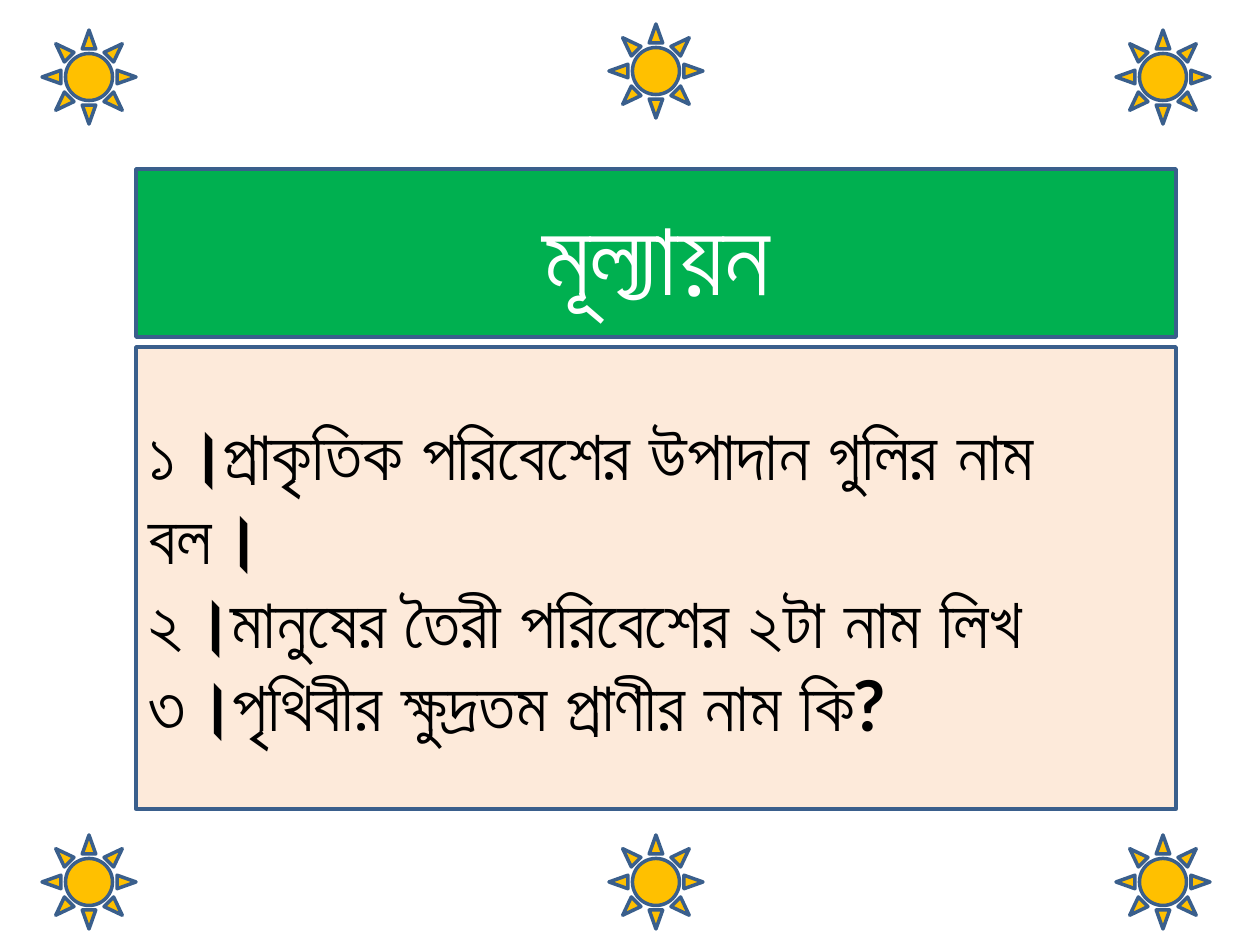
"""Build the evaluation slide: a title panel, three questions and six suns."""
from pptx import Presentation
from pptx.dml.color import RGBColor
from pptx.enum.shapes import MSO_SHAPE
from pptx.enum.text import MSO_ANCHOR, PP_ALIGN
from pptx.util import Pt

RECTANGLE, SUN = MSO_SHAPE.RECTANGLE, MSO_SHAPE.SUN
MIDDLE = MSO_ANCHOR.MIDDLE
LEFT, CENTER = PP_ALIGN.LEFT, PP_ALIGN.CENTER

PX = 914400 // 126
COLORS = {"green": "00B050", "peach": "FDEADA", "gold": "FFC000",
          "outline": "3A5F8C", "white": "FFFFFF", "black": "000000"}

PANEL_LEFT, PANEL_WIDTH = 136, 1040
PANELS = [
    {"top": 169, "height": 168, "fill": "green", "align": CENTER,
     "color": "white", "font": {"size": Pt(60), "name": "Lato"},
     "lines": ["মূল্যায়ন"]},
    {"top": 347, "height": 462, "fill": "peach", "align": LEFT,
     "color": "black", "font": {"size": Pt(40), "name": "Lato", "bold": True},
     "lines": ["১।প্রাকৃতিক পরিবেশের উপাদান গুলির নাম বল।",
               "২।মানুষের তৈরী পরিবেশের ২টা নাম লিখ",
               "৩।পৃথিবীর ক্ষুদ্রতম প্রাণীর নাম কি?"]},
]

SUN_SIZE = 94
SUN_BOTTOM_ROW = 835
SUN_COLUMNS = [(42, 30), (1116, 30), (609, 24)]


def rgb(name):
    return RGBColor.from_string(COLORS[name])


def add_outlined(slide, kind, box, fill):
    shape = slide.shapes.add_shape(kind, *(n * PX for n in box))
    shape.shadow.inherit = False
    shape.fill.solid()
    shape.fill.fore_color.rgb = rgb(fill)
    shape.line.color.rgb = rgb("outline")
    shape.line.width = Pt(2)
    return shape


def add_panel(slide, panel):
    box = PANEL_LEFT, panel["top"], PANEL_WIDTH, panel["height"]
    frame = add_outlined(slide, RECTANGLE, box, panel["fill"]).text_frame
    frame.word_wrap = True
    frame.vertical_anchor = MIDDLE
    for index, line in enumerate(panel["lines"]):
        paragraph = frame.add_paragraph() if index else frame.paragraphs[0]
        paragraph.alignment = panel["align"]
        run = paragraph.add_run()
        run.text = line
        for attribute, value in panel["font"].items():
            setattr(run.font, attribute, value)
        run.font.color.rgb = rgb(panel["color"])


def main():
    deck = Presentation()
    deck.slide_width, deck.slide_height = 1260 * PX, 945 * PX
    slide = deck.slides.add_slide(deck.slide_layouts[6])
    for panel in PANELS:
        add_panel(slide, panel)
    for left, top in SUN_COLUMNS:
        for row in (top, SUN_BOTTOM_ROW):
            add_outlined(slide, SUN, (left, row, SUN_SIZE, SUN_SIZE), "gold")
    deck.save("out.pptx")


if __name__ == "__main__":
    main()
